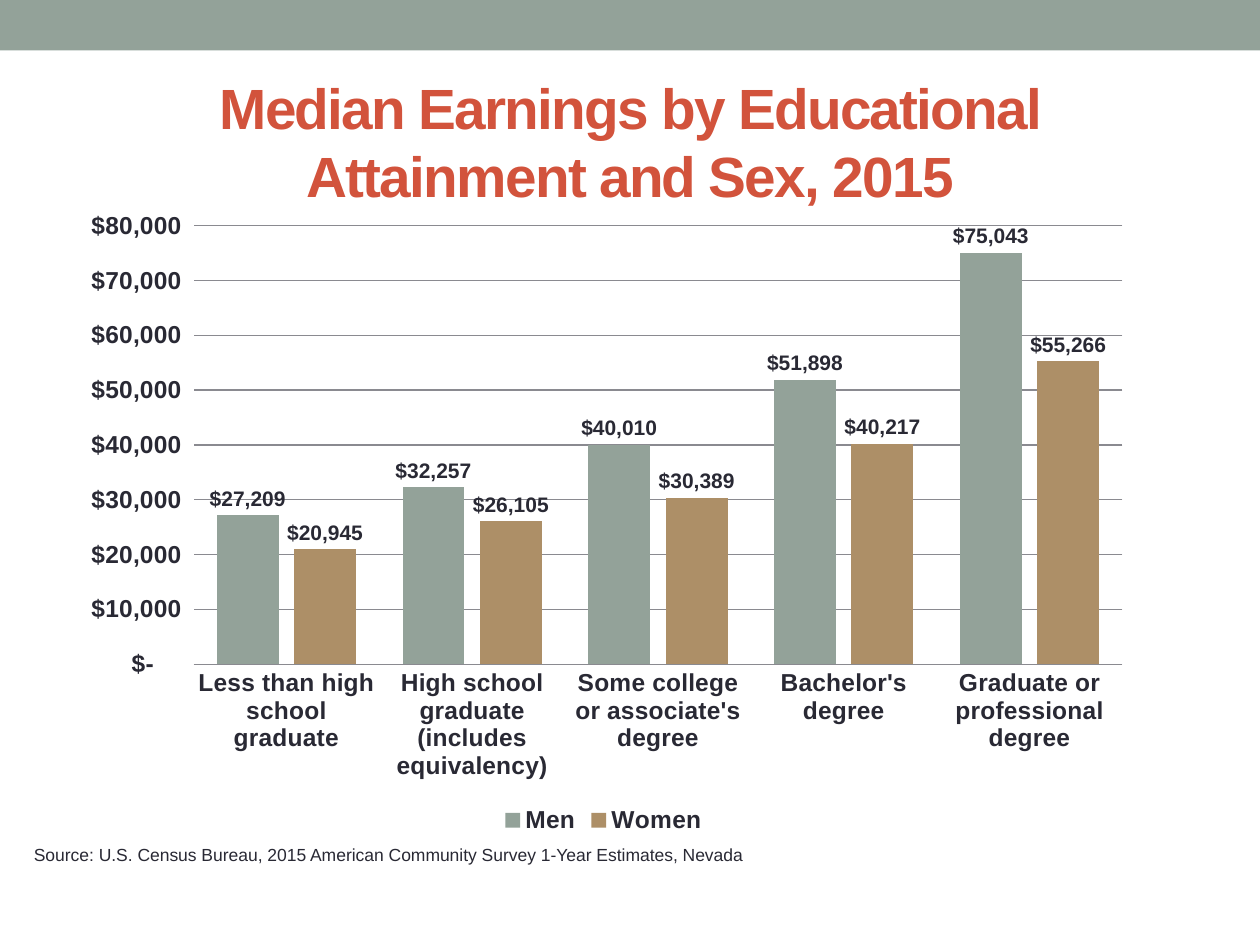
import pptx
import pptx.chart.data
import pptx.dml.color
import pptx.enum.chart
import pptx.enum.shapes
import pptx.enum.text
import pptx.util

Inches = pptx.util.Inches
Pt = pptx.util.Pt

FONT = "Arial"
INK, SAGE, TAN, RED, GRID = "292934", "93A299", "AD8F67", "D2533C", "8A8A90"
DOLLARS = '_("$"* #,##0_);_("$"* \\(#,##0\\);_("$"* "-"??_);_(@_)'

CATEGORIES = [
    "Less than high school graduate",
    "High school graduate (includes equivalency)",
    "Some college or associate's degree",
    "Bachelor's degree",
    "Graduate or professional degree",
]
EARNINGS = [
    ("Men", SAGE, [27209, 32257, 40010, 51898, 75043]),
    ("Women", TAN, [20945, 26105, 30389, 40217, 55266]),
]


def rgb(value):
    return pptx.dml.color.RGBColor.from_string(value)


def format_font(font, size, color=INK, bold=False):
    font.name = FONT
    font.size = Pt(size)
    font.bold = bold
    font.color.rgb = rgb(color)


def write_text(sp, text, size, color=INK, bold=False, align=None, anchor=None, spacing=0):
    """Fill a shape with one paragraph; spacing is in points between letters."""
    tf = sp.text_frame
    tf.word_wrap = True
    tf.vertical_anchor = anchor
    p = tf.paragraphs[0]
    p.alignment = align
    r = p.add_run()
    r.text = text
    format_font(r.font, size, color, bold)
    if spacing:
        r.font._element.set("spc", str(int(spacing * 100)))


def add_band(s):
    sp = s.shapes.add_shape(pptx.enum.shapes.MSO_SHAPE.RECTANGLE,
                            0, 0, Inches(10), Inches(0.4))
    sp.shadow.inherit = False
    sp.fill.solid()
    sp.fill.fore_color.rgb = rgb(SAGE)
    sp.line.fill.background()


def add_title(s, text):
    sp = s.shapes.title
    sp.left, sp.top, sp.width, sp.height = map(Inches, (0.5, 0.58, 9, 1.08))
    write_text(sp, text, 32.4, color=RED, bold=True, spacing=-1,
               align=pptx.enum.text.PP_ALIGN.CENTER,
               anchor=pptx.enum.text.MSO_ANCHOR.MIDDLE)
    sp.text_frame.auto_size = pptx.enum.text.MSO_AUTO_SIZE.NONE


def format_axes(chart):
    no_tick = pptx.enum.chart.XL_TICK_MARK.NONE
    for axis in (chart.category_axis, chart.value_axis):
        axis.major_tick_mark = axis.minor_tick_mark = no_tick
        format_font(axis.tick_labels.font, 14, bold=True)
    chart.category_axis.format.line.color.rgb = rgb(GRID)
    values = chart.value_axis
    values.minimum_scale, values.maximum_scale, values.major_unit = 0, 80000, 10000
    values.tick_labels.number_format = DOLLARS
    values.tick_labels.number_format_is_linked = False
    values.format.line.fill.background()
    values.has_major_gridlines = True
    values.major_gridlines.format.line.color.rgb = rgb(GRID)
    values.major_gridlines.format.line.width = Pt(0.75)


def format_series(series, color):
    series.format.fill.solid()
    series.format.fill.fore_color.rgb = rgb(color)
    series.invert_if_negative = False
    labels = series.data_labels
    labels.show_value = True
    labels.number_format = DOLLARS
    labels.number_format_is_linked = False
    labels.position = pptx.enum.chart.XL_LABEL_POSITION.OUTSIDE_END
    format_font(labels.font, 12, bold=True)


def add_earnings_chart(s):
    data = pptx.chart.data.CategoryChartData(number_format=DOLLARS)
    data.categories = CATEGORIES
    for name, _, values in EARNINGS:
        data.add_series(name, values)
    chart = s.shapes.add_chart(
        pptx.enum.chart.XL_CHART_TYPE.COLUMN_CLUSTERED,
        Inches(0.5), Inches(1.58), Inches(8.58), Inches(5.08), data).chart
    format_font(chart.font, 10)
    chart.has_title = False
    chart.has_legend = True
    chart.legend.position = pptx.enum.chart.XL_LEGEND_POSITION.BOTTOM
    chart.legend.include_in_layout = False
    format_font(chart.legend.font, 14, bold=True)
    format_axes(chart)
    plot = chart.plots[0]
    plot.gap_width = 75
    plot.overlap = -25
    plot.vary_by_categories = False
    for series, (_, color, _) in zip(plot.series, EARNINGS):
        format_series(series, color)


def add_source(s, text):
    sp = s.shapes.add_textbox(Inches(0.17), Inches(6.65), Inches(9.08), Inches(0.27))
    write_text(sp, text, 10)
    sp.text_frame.auto_size = pptx.enum.text.MSO_AUTO_SIZE.SHAPE_TO_FIT_TEXT


def main():
    prs = pptx.Presentation()
    prs.slide_width, prs.slide_height = Inches(10), Inches(7.5)
    s = prs.slides.add_slide(prs.slide_layouts[5])
    add_band(s)
    add_title(s, "Median Earnings by Educational Attainment and Sex, 2015")
    add_earnings_chart(s)
    add_source(s, "Source: U.S. Census Bureau, 2015 American Community Survey "
                  "1-Year Estimates, Nevada")
    prs.save("out.pptx")


if __name__ == "__main__":
    main()
